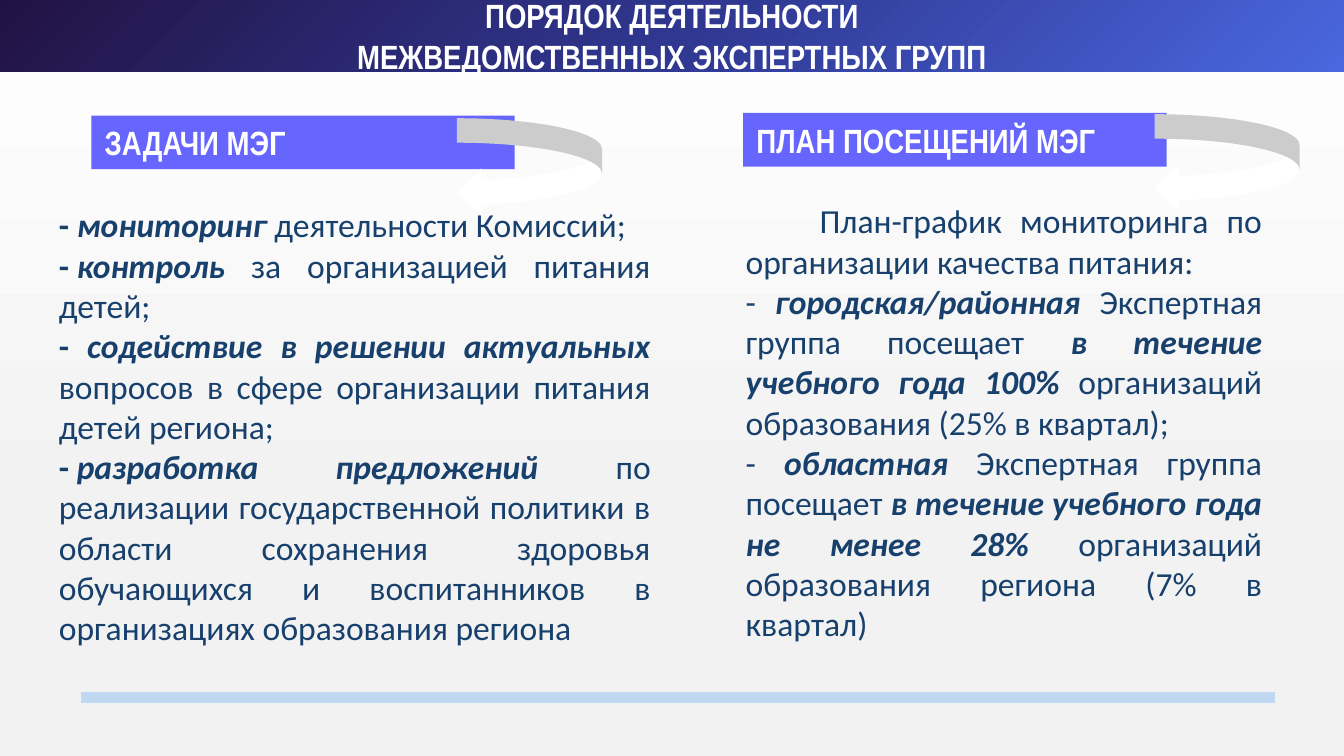
"""Build the slide on how the interagency expert groups work."""
from pptx import Presentation
from pptx import util as u
from pptx.dml.color import RGBColor
from pptx.enum import shapes, text
from pptx.oxml import parse_xml
from pptx.oxml.ns import nsdecls, qn

W = 10
H = W * 9 / 16
COLORS = {"head": "6666FF", "body": "17406D", "white": "FFFFFF", "rule": "C1D8F2"}
BACKGROUND = [(0, "FFFFFF"), (68, "F2F2F2"), (100, "F2F2F2")]
BANNER = [(0, "4A67DF"), (50, "2F3790"), (100, "221243")]
DOWN = '<a:lin ang="5400000" scaled="0"/>'
CORNER = '<a:path path="circle"><a:fillToRect l="100000" t="100000"/></a:path>'
TITLE = ["ПОРЯДОК ДЕЯТЕЛЬНОСТИ", "МЕЖВЕДОМСТВЕННЫХ ЭКСПЕРТНЫХ ГРУПП"]
PLAIN, BOLD, STRONG = (False, False), (True, False), (True, True)
FIXED_DASH = "-" + chr(160)
COLUMNS = [
    {
        "head": "ПЛАН ПОСЕЩЕНИЙ МЭГ",
        "head_at": (5.53, 0.84), "arrow_at": (8.59, 0.85),
        "body_at": (5.45, 1.44, 4.04, 3.43), "indent": 0.55,
        "body": [
            [("План-график мониторинга по организации качества питания:", PLAIN)],
            [("- ", PLAIN), ("городская/районная", STRONG),
             (" Экспертная группа посещает ", PLAIN),
             ("в течение учебного года 100% ", STRONG),
             ("организаций образования (25% в квартал);", PLAIN)],
            [("- ", PLAIN), ("областная", STRONG),
             (" Экспертная группа посещает ", PLAIN),
             ("в течение учебного года не менее 28% ", STRONG),
             ("организаций образования региона (7% в квартал)", PLAIN)],
        ],
    },
    {
        "head": "ЗАДАЧИ МЭГ",
        "head_at": (0.68, 0.86), "arrow_at": (3.4, 0.88),
        "body_at": (0.34, 1.47, 4.6, 3.43), "indent": 0,
        "body": [
            [(FIXED_DASH, BOLD), ("мониторинг", STRONG),
             (" деятельности Комиссий;", PLAIN)],
            [(FIXED_DASH, BOLD), ("контроль", STRONG),
             (" за организацией питания детей;", PLAIN)],
            [("- ", BOLD), ("содействие в решении актуальных ", STRONG),
             ("вопросов в сфере организации питания детей региона;", PLAIN)],
            [(FIXED_DASH, BOLD), ("разработка предложений ", STRONG),
             ("по реализации государственной политики в области сохранения здоровья "
              "обучающихся и воспитанников в организациях образования региона", PLAIN)],
        ],
    },
]


def rgb(name):
    return RGBColor.from_string(COLORS[name])


def inches(*values):
    return [u.Inches(v) for v in values]


def paint_gradient(fill, element, stops, direction):
    fill.gradient()
    old = next(element.iter(qn("a:gradFill")))
    marks = "".join(f'<a:gs pos="{pos * 1000}"><a:srgbClr val="{color}"/></a:gs>'
                    for pos, color in stops)
    old.getparent().replace(old, parse_xml(
        f'<a:gradFill {nsdecls("a")} rotWithShape="1"><a:gsLst>{marks}</a:gsLst>'
        f'{direction}</a:gradFill>'))


def add_shape(s, kind, box, color=None):
    sp = s.shapes.add_shape(kind, *inches(*box))
    sp.shadow.inherit = False
    sp.line.fill.background()
    if color:
        sp.fill.solid()
        sp.fill.fore_color.rgb = rgb(color)
    return sp


def write(sp, paragraphs, font, color, align, anchor=text.MSO_ANCHOR.TOP):
    tf = sp.text_frame
    tf.word_wrap = True
    tf.vertical_anchor = anchor
    for i, runs in enumerate(paragraphs):
        p = tf.add_paragraph() if i else tf.paragraphs[0]
        p.alignment = align
        p.font.name, p.font.size = font, u.Pt(18)
        p.font.color.rgb = rgb(color)
        for words, (bold, italic) in runs:
            r = p.add_run()
            r.text = words
            r.font.bold, r.font.italic = bold, italic
    return tf


def add_column(s, head, head_at, body_at, indent, body, **_):
    sp = s.shapes.add_textbox(*inches(*body_at))
    tf = write(sp, body, "Calibri", "body", text.PP_ALIGN.JUSTIFY)
    tf.auto_size = text.MSO_AUTO_SIZE.SHAPE_TO_FIT_TEXT
    if indent:
        pPr = tf.paragraphs[0]._p.get_or_add_pPr()
        pPr.set("marL", "0")
        pPr.set("indent", str(u.Inches(indent)))
    sp = add_shape(s, shapes.MSO_SHAPE.RECTANGLE, (*head_at, 3.15, 0.4), "head")
    tf = write(sp, [[(head, BOLD)]], "Arial Narrow", "white", text.PP_ALIGN.LEFT)
    tf.auto_size = text.MSO_AUTO_SIZE.SHAPE_TO_FIT_TEXT


def main():
    prs = Presentation()
    prs.slide_width, prs.slide_height = inches(W, H)
    s = prs.slides.add_slide(prs.slide_layouts[6])
    paint_gradient(s.background.fill, s.element, BACKGROUND, DOWN)

    rule = s.shapes.add_connector(shapes.MSO_CONNECTOR.STRAIGHT,
                                  *inches(0.6, 5.19, 9.49, 5.19))
    rule.line.color.rgb = rgb("rule")
    rule.line.width = u.Pt(6)
    rule._element.spPr.append(parse_xml(f'<a:effectLst {nsdecls("a")}/>'))

    for column in COLUMNS:
        add_column(s, **column)

    banner = add_shape(s, shapes.MSO_SHAPE.RECTANGLE, (0, 0, W, 0.53))
    paint_gradient(banner.fill, banner._element, BANNER, CORNER)
    write(banner, [[(line, BOLD)] for line in TITLE], "Arial Narrow", "white",
          text.PP_ALIGN.CENTER, text.MSO_ANCHOR.MIDDLE)

    for column in COLUMNS:
        arrow = add_shape(s, shapes.MSO_SHAPE.CURVED_LEFT_ARROW,
                          (*column["arrow_at"], 1.08, 0.73), "white")
        for i, value in enumerate((0.25, 0.485, 0.25)):
            arrow.adjustments[i] = value

    prs.save("out.pptx")


if __name__ == "__main__":
    main()
